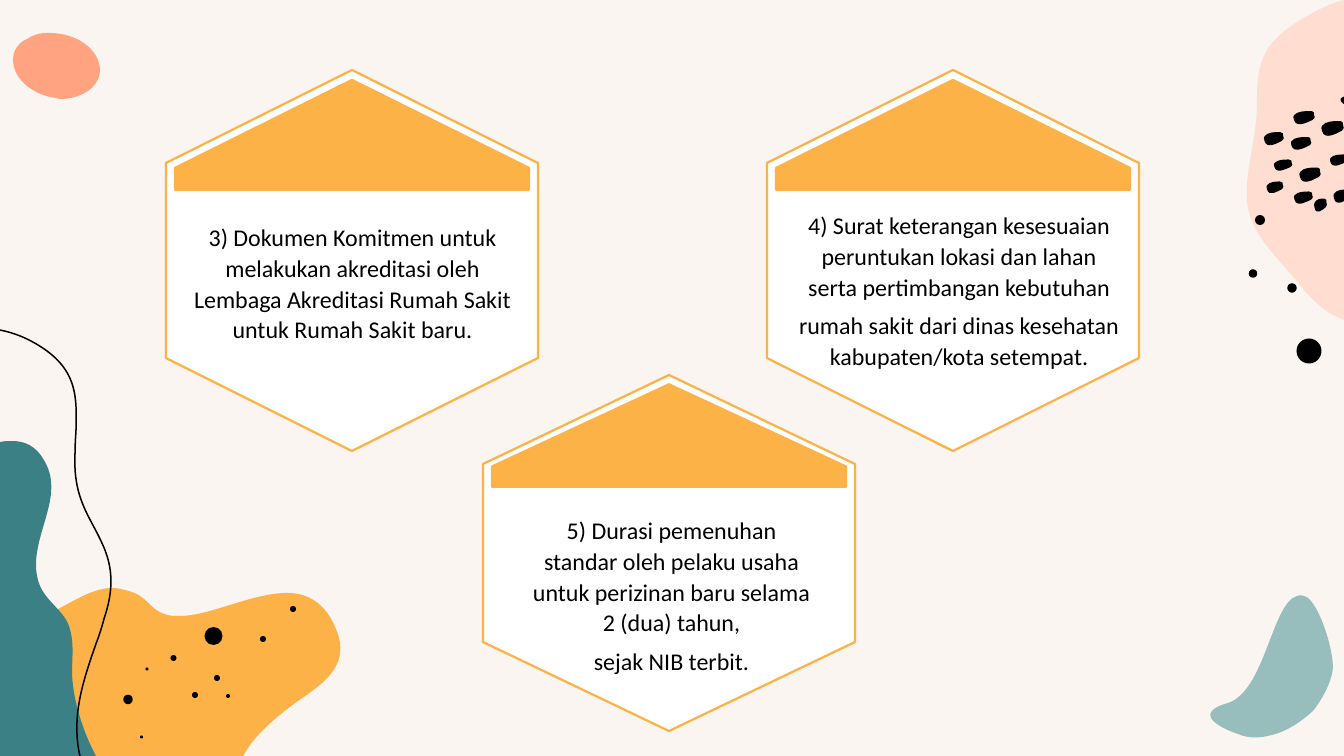
from pptx import Presentation
from pptx.dml.color import RGBColor
from pptx.enum.shapes import MSO_SHAPE as SHAPE
from pptx.enum.text import MSO_AUTO_SIZE as AUTO, PP_ALIGN as ALIGN
from pptx.oxml.ns import qn
from pptx.oxml.xmlchemy import OxmlElement
from pptx.util import Pt

CREAM = RGBColor(0xFA, 0xF5, 0xF1)
BLACK = RGBColor(0, 0, 0)
WHITE = RGBColor(0xFF, 0xFF, 0xFF)
AMBER = RGBColor(0xFC, 0xB2, 0x47)
TEAL = RGBColor(0x3B, 0x80, 0x85)
MINT = RGBColor(0x97, 0xBE, 0xBD)
CORAL = RGBColor(0xFF, 0xA3, 0x81)
PINK = RGBColor(0xFF, 0xDD, 0xD1)

# Curves: a start point, then two handles and an end point per segment
TEAL_WAVE = [
    (0, 115), (4, 114), (8, 114), (12, 114), (24, 114), (36, 118), (45, 135),
    (66, 172), (27, 213), (38, 253), (43, 273), (63, 282), (69, 299),
    (76, 320), (70, 338), (73, 358), (75, 378), (84, 407), (96, 429),
    (96, 429), (0, 429), (0, 429)]
AMBER_BLOB = [
    (113, 261), (89, 261), (68, 279), (45, 288), (24, 297), (4, 302), (-14, 302),
    (-14, 302), (-14, 461), (-14, 461), (-14, 461), (234, 461), (234, 461),
    (238, 426), (256, 407), (286, 383), (312, 362), (354, 345), (336, 302),
    (325, 275), (307, 266), (287, 266), (252, 266), (210, 289), (180, 289),
    (177, 289), (175, 289), (173, 289), (150, 286), (151, 272), (132, 265),
    (125, 263), (119, 261), (113, 261)]
THREAD = [
    (80, 429), (71, 390), (83, 354), (96, 317), (99, 309), (102, 300), (104, 292),
    (119, 248), (107, 225), (95, 202), (86, 185), (76, 168), (75, 140),
    (75, 127), (75, 117), (76, 105), (77, 68), (78, 39), (31, 14),
    (14, 5), (-4, 1), (-21, 1), (-28, 1), (-35, 2), (-42, 3)]
PINK_BLOB = [
    (97, 0), (81, 4), (65, 13), (55, 19), (17, 42), (10, 60), (10, 100),
    (10, 101), (10, 103), (10, 106), (10, 132), (1, 161), (0, 186),
    (0, 193), (0, 197), (0, 201), (3, 233), (28, 255), (48, 279),
    (66, 302), (79, 313), (97, 320)]
MINT_LEAF = [
    (87, 1), (90, 0), (94, 0), (98, 3), (110, 13), (122, 50), (123, 71),
    (123, 85), (112, 105), (103, 116), (92, 126), (78, 136), (62, 140),
    (51, 143), (39, 144), (28, 139), (15, 135), (-21, 119), (18, 108),
    (55, 96), (62, 8), (87, 1)]
CORAL_PEBBLE = [
    (42, 0), (37, 0), (32, 0), (27, 2), (24, 3), (22, 4), (19, 6),
    (14, 8), (9, 12), (6, 20), (0, 45), (27, 63), (48, 65),
    (50, 66), (52, 66), (53, 66), (73, 66), (97, 53), (91, 30),
    (85, 10), (62, 0), (42, 0)]
BEAN = [  # percent of its box
    (96, 57), (100, 52), (100, 40), (96, 33), (100, 15), (93, 0), (78, 0),
    (56, 0), (15, 0), (0, 33), (-4, 40), (-4, 52), (0, 68),
    (11, 135), (67, 85), (89, 68), (93, 62), (93, 62), (96, 57)]

# Spots: left, top, width, height; dots: centre x, centre y, diameter
SPOTS = [
    (87, 189.5, 17, 13), (67.5, 198.5, 12.5, 13), (53, 167.5, 21, 14),
    (75, 121, 22, 14.5), (94, 95.5, 16, 8.5), (47, 111, 21, 13),
    (44.5, 137, 20, 12.5), (27.5, 159.5, 18, 11), (20, 181.5, 16.5, 11.5),
    (47.5, 191.5, 18.5, 12), (17.5, 132, 19.5, 13), (83.5, 154.5, 17.5, 11)]
PINK_DOTS = [(62, 351, 25), (6, 273.5, 8.5), (13, 220, 10), (45, 288, 9.5)]
AMBER_DOTS = [
    (213.5, 309, 18), (263, 312, 6), (293, 282, 6), (217, 351, 6), (195, 368, 6),
    (128, 372.5, 9.5), (173.5, 331, 6), (147, 342, 3), (141.5, 410, 3), (228, 369, 4)]

# Cards: box, text area inside it, paragraphs
CARDS = [
    ((166, 70, 372, 381), (12, 147, 349, 130),
     ["3) Dokumen Komitmen untuk melakukan akreditasi oleh Lembaga Akreditasi "
      "Rumah Sakit untuk Rumah Sakit baru."]),
    ((767, 70, 372, 381), (21.5, 135, 341, 169),
     ["4) Surat keterangan kesesuaian peruntukan lokasi dan lahan serta "
      "pertimbangan kebutuhan",
      "rumah sakit dari dinas kesehatan kabupaten/kota setempat."]),
    ((483, 375, 372, 356), (42, 135, 293, 158),
     ["5) Durasi pemenuhan standar oleh pelaku usaha untuk perizinan baru "
      "selama 2 (dua) tahun,",
      "sejak NIB terbit."])]


def paint(sp, fill=None, line=None, width=2.25):
    sp.shadow.inherit = False
    if fill is None:
        sp.fill.background()
    else:
        sp.fill.solid()
        sp.fill.fore_color.rgb = fill
    if line is None:
        sp.line.fill.background()
    else:
        sp.line.color.rgb = line
        sp.line.width = Pt(width)


def outline(s, x, y, points, close=True):
    pts = [(Pt(x + px), Pt(y + py)) for px, py in points]
    fb = s.shapes.build_freeform(*pts[0])
    fb.add_line_segments(pts[1:], close=close)
    return fb.convert_to_shape()


def curve(s, x, y, points, close=True):
    sp = outline(s, x, y, points, close)
    steps = list(sp._element.iter(qn("a:lnTo")))
    # Each three straight steps become one Bézier segment
    for i in range(0, len(points) - 1, 3):
        bezier = OxmlElement("a:cubicBezTo")
        steps[i].addprevious(bezier)
        for step in steps[i:i + 3]:
            bezier.append(step[0])
            step.getparent().remove(step)
    return sp


def dots(s, x, y, items):
    for cx, cy, d in items:
        sp = s.shapes.add_shape(SHAPE.OVAL, Pt(x + cx - d / 2), Pt(y + cy - d / 2),
                                Pt(d), Pt(d))
        paint(sp, BLACK)


def top_right(s, x, y):
    paint(curve(s, x, y, PINK_BLOB), PINK)
    for left, top, w, h in SPOTS:
        bean = [(px * w / 100, py * h / 100) for px, py in BEAN]
        paint(curve(s, x + left, y + top, bean), BLACK)
    dots(s, x, y, PINK_DOTS)


def bottom_left(s, x, y):
    paint(curve(s, x, y, AMBER_BLOB), AMBER)
    paint(curve(s, x, y, TEAL_WAVE), TEAL)
    dots(s, x, y, AMBER_DOTS)
    paint(curve(s, x, y, THREAD, close=False), line=BLACK, width=1.5)


def card(s, box, area, texts):
    x, y, w, h = box
    # Hexagon standing on its point: a lying one, turned about its centre
    sp = s.shapes.add_shape(SHAPE.HEXAGON, Pt(x + (w - h) / 2), Pt(y + (h - w) / 2),
                            Pt(h), Pt(w))
    sp.rotation = 270
    paint(sp, WHITE, AMBER)
    # Roof
    inset, peak, eave, base = 9, 0.026 * h, 0.257 * h, 0.314 * h
    roof = [(w / 2, peak), (w - inset, eave), (w - inset, base),
            (inset, base), (inset, eave)]
    paint(outline(s, x, y, roof), AMBER, AMBER)
    # Text
    dx, dy, tw, th = area
    tf = s.shapes.add_textbox(Pt(x + dx), Pt(y + dy), Pt(tw), Pt(th)).text_frame
    tf.word_wrap = True
    tf.auto_size = AUTO.SHAPE_TO_FIT_TEXT
    tf.text = "\n".join(texts)
    for p in tf.paragraphs:
        p.alignment = ALIGN.CENTER
        p.line_spacing = 1.07
        p.space_after = Pt(8)
        for r in p.runs:
            r.font.name = "Calibri"
            r.font.size = Pt(24)
            r.font.color.rgb = BLACK


def main():
    prs = Presentation()
    prs.slide_width, prs.slide_height = Pt(1344), Pt(756)
    s = prs.slides.add_slide(prs.slide_layouts[6])
    s.background.fill.solid()
    s.background.fill.fore_color.rgb = CREAM
    # Corner decorations
    paint(curve(s, 1210, 595, MINT_LEAF), MINT)
    top_right(s, 1247, 0)
    paint(curve(s, 8, 33, CORAL_PEBBLE), CORAL)
    bottom_left(s, 0, 327)
    # Requirement cards
    for box, area, texts in CARDS:
        card(s, box, area, texts)
    prs.save("out.pptx")


if __name__ == "__main__":
    main()
